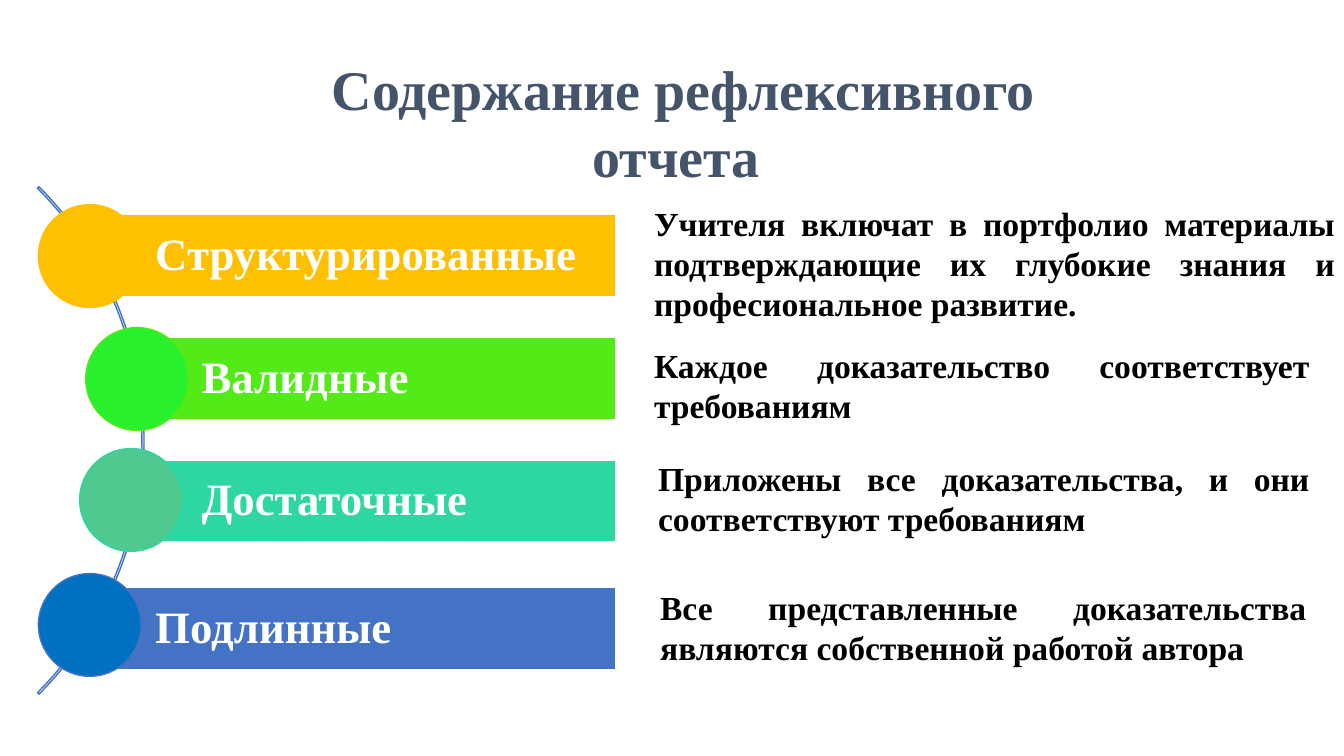
from pptx import Presentation
from pptx.dml.color import RGBColor
from pptx.enum import shapes, text
from pptx.util import Pt

FONT = "Times New Roman"
BAR_RIGHT, BAR_HEIGHT, CIRCLE = 440, 58.3, 73.4

# label, bar colour, bar (left, top), circle colour, circle (left, top)
QUALITIES = [
    ("Структурированные", "FFC000", (64.1, 153.4), "FFC000", (27.4, 146.2)),
    ("Валидные", "53EB17", (97.2, 241.2), "28F02D", (61.2, 234)),
    ("Достаточные", "2ED7A1", (97.2, 329), "4FC98F", (56.9, 320.4)),
    ("Подлинные", "4472C4", (64.1, 419.8), "0070C0", (27.4, 409.7)),
]

# explanation, (left, top, width, height)
EXPLANATIONS = [
    ("Учителя включат в портфолио материалы подтверждающие их глубокие знания и "
     "професиональное развитие.", (460.1, 141.1, 500.4, 94.3)),
    ("Каждое доказательство соответствует требованиям", (460.1, 242.6, 482.4, 65.5)),
    ("Приложены все доказательства, и они соответствуют требованиям",
     (463, 323.3, 479.5, 65.5)),
    ("Все представленные доказательства являются собственной работой автора",
     (464.4, 415.4, 475.9, 65.5)),
]


def rgb(value):
    return RGBColor.from_string(value)


def write(frame, words, size, colour, align, spacing=1.0):
    """Put one bold paragraph into a text frame."""
    frame.word_wrap = True
    frame.auto_size = text.MSO_AUTO_SIZE.NONE
    frame.text = words
    paragraph = frame.paragraphs[0]
    paragraph.alignment = align
    paragraph.line_spacing = spacing
    font = paragraph.runs[0].font
    font.name, font.size, font.bold = FONT, Pt(size), True
    font.color.rgb = rgb(colour)


def add_figure(slide, kind, box, fill, line):
    figure = slide.shapes.add_shape(kind, *map(Pt, box))
    figure.shadow.inherit = False
    if fill:
        figure.fill.solid()
        figure.fill.fore_color.rgb = rgb(fill)
    else:
        figure.fill.background()
    figure.line.color.rgb = rgb(line)
    figure.line.width = Pt(1)
    return figure


def add_title(slide, words):
    title = slide.shapes.title
    title.left, title.top, title.width, title.height = map(Pt, (181.4, 35.3, 613.4, 104.4))
    title.text_frame.vertical_anchor = text.MSO_ANCHOR.TOP
    write(title.text_frame, words, 40, "44546A", text.PP_ALIGN.CENTER)


def add_arc(slide):
    arc = add_figure(slide, shapes.MSO_SHAPE.BLOCK_ARC,
                     (-409.7, 58.3, 512.6, 512.6), None, "4472C4")
    for index, value in enumerate((189, 27, 0.003)):
        arc.adjustments[index] = value


def add_quality(slide, label, bar_colour, bar_at, circle_colour, circle_at):
    """Add a labelled bar with its circle."""
    left, top = bar_at
    bar = add_figure(slide, shapes.MSO_SHAPE.RECTANGLE,
                     (left, top, BAR_RIGHT - left, BAR_HEIGHT), bar_colour, "FFFFFF")
    frame = bar.text_frame
    frame.margin_left = Pt(46.8)
    frame.margin_top = frame.margin_right = frame.margin_bottom = Pt(6.5)
    frame.vertical_anchor = text.MSO_ANCHOR.MIDDLE
    write(frame, label, 32, "FFFFFF", text.PP_ALIGN.LEFT, 0.9)
    add_figure(slide, shapes.MSO_SHAPE.OVAL, (*circle_at, CIRCLE, CIRCLE),
               circle_colour, bar_colour)


def add_explanation(slide, words, box):
    note = slide.shapes.add_textbox(*map(Pt, box))
    write(note.text_frame, words, 24, "000000", text.PP_ALIGN.JUSTIFY)


def main():
    deck = Presentation()
    deck.slide_width, deck.slide_height = Pt(960), Pt(540)
    slide = deck.slides.add_slide(deck.slide_layouts.get_by_name("Title Only"))
    add_title(slide, "Содержание рефлексивного отчета ")
    add_arc(slide)
    for quality in QUALITIES:
        add_quality(slide, *quality)
    for explanation in EXPLANATIONS:
        add_explanation(slide, *explanation)
    deck.save("out.pptx")


if __name__ == "__main__":
    main()
